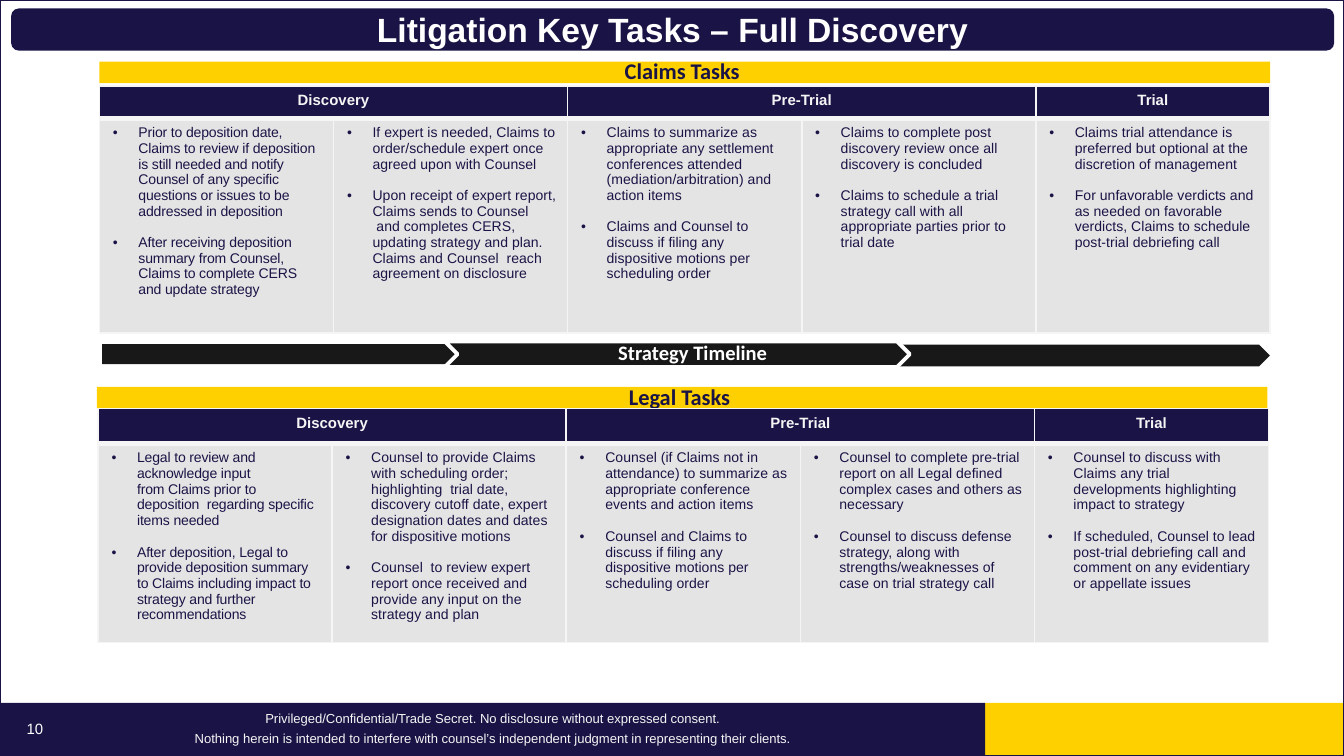
from lxml import etree
from pptx import Presentation
from pptx.dml.color import RGBColor
from pptx.enum.shapes import MSO_SHAPE
from pptx.enum.text import MSO_ANCHOR, PP_ALIGN
from pptx.oxml import parse_xml
from pptx.oxml.ns import nsdecls, qn
from pptx.util import Inches, Pt

RECT = MSO_SHAPE.RECTANGLE
ROUNDED = MSO_SHAPE.ROUNDED_RECTANGLE
PENTAGON = MSO_SHAPE.PENTAGON
CHEVRON = MSO_SHAPE.CHEVRON
MIDDLE = MSO_ANCHOR.MIDDLE
LEFT, CENTER, RIGHT = PP_ALIGN.LEFT, PP_ALIGN.CENTER, PP_ALIGN.RIGHT

NAVY, YELLOW, BLACK = "1A1446", "FFD000", "181818"
WHITE, PALE, GREY = "FFFFFF", "F5F5F5", "E4E4E4"
SLIDE_WIDTH, SLIDE_HEIGHT = 10, 5.625
COLUMN_WIDTH = 1.742
TIE, HARD_SPACE = "~", chr(160)
HEADERS = ["Discovery", "Pre-Trial", "Trial"]

CLAIMS_TASKS = [
    ["Prior to deposition date, Claims to review if deposition is still needed and notify "
     "Counsel of any specific questions or issues to be addressed in deposition",
     "After receiving deposition summary from Counsel, Claims to complete CERS and update strategy"],
    ["If expert is needed, Claims to order/schedule expert once agreed upon with Counsel",
     "Upon receipt of expert report, Claims sends to~Counsel ~and completes CERS, updating "
     "strategy and plan. Claims and Counsel ~reach agreement on disclosure"],
    ["Claims to summarize as appropriate any settlement conferences attended "
     "(mediation/arbitration) and action items",
     "Claims and Counsel to discuss if filing any dispositive motions per scheduling order"],
    ["Claims to complete post discovery review once all discovery is concluded",
     "Claims to schedule a trial strategy call with all appropriate parties prior to trial date"],
    ["Claims trial attendance is preferred but optional at the discretion of management",
     "For unfavorable verdicts and as needed on favorable verdicts, Claims to schedule "
     "post-trial debriefing call"],
]
LEGAL_TASKS = [
    ["Legal to review and acknowledge input from~Claims prior to deposition~ regarding "
     "specific items needed",
     "After~deposition, Legal to provide deposition summary to Claims including impact to "
     "strategy and further recommendations"],
    ["Counsel to provide Claims with scheduling order; highlighting~ trial date, discovery "
     "cutoff date, expert designation dates and dates for dispositive motions",
     "Counsel ~to review expert report once received and provide any input on the strategy and plan"],
    ["Counsel~(if Claims not in attendance) to summarize as appropriate conference events "
     "and action items",
     "Counsel and Claims to discuss if filing any dispositive motions per scheduling order"],
    ["Counsel to complete pre-trial report on all Legal defined complex cases and others as necessary",
     "Counsel to discuss defense strategy, along with strengths/weaknesses of case on trial strategy call"],
    ["Counsel to discuss with Claims any trial developments highlighting impact to strategy",
     "If scheduled, Counsel to lead post-trial debriefing call and comment on any evidentiary "
     "or appellate issues"],
]
FOOTER = [
    "Privileged/Confidential/Trade Secret. No disclosure without expressed consent.",
    "Nothing herein is intended to interfere with counsel’s independent judgment in "
    "representing their clients.",
]


def rgb(value):
    """Turn a hex string into a colour."""
    return RGBColor.from_string(value)


def add_block(page, kind, at, fill=None, line=None, width=1):
    """Add a preset shape with plain fill and line."""
    block = page.shapes.add_shape(kind, *map(Inches, at))
    block.shadow.inherit = False
    if fill:
        block.fill.solid()
        block.fill.fore_color.rgb = rgb(fill)
    else:
        block.fill.background()
    if line:
        block.line.color.rgb = rgb(line)
        block.line.width = Pt(width)
    else:
        block.line.fill.background()
    return block


def write(frame, lines, size, color, font="Arial", bold=False, align=CENTER,
          spacing=1.0, gap=0, bullet=False, tracking=0):
    """Write each line as a paragraph of the text frame."""
    for index, line in enumerate(lines):
        para = frame.add_paragraph() if index else frame.paragraphs[0]
        para.alignment = align
        para.line_spacing = spacing
        if index:
            para.space_before = Pt(gap)
        if bullet:
            properties = para._p.get_or_add_pPr()
            properties.set("marL", str(Inches(0.19)))
            properties.set("indent", str(-Inches(0.19)))
            etree.SubElement(properties, qn("a:buFont")).set("typeface", "Arial")
            etree.SubElement(properties, qn("a:buChar")).set("char", "•")
        span = para.add_run()
        span.text = line.replace(TIE, HARD_SPACE)
        span.font.name = font
        span.font.size = Pt(size)
        span.font.bold = bold
        span.font.color.rgb = rgb(color)
        if tracking:
            span._r.get_or_add_rPr().set("spc", str(tracking))


def label(box, lines, size, color, **style):
    """Write vertically centred text without wrapping in a shape."""
    frame = box.text_frame
    frame.word_wrap = False
    frame.vertical_anchor = MIDDLE
    frame.margin_top = frame.margin_bottom = Inches(0.05)
    write(frame, lines, size, color, **style)


def style_cell(cell, fill, top=1, bottom=1):
    """Give a cell its borders and fill."""
    properties = cell._tc.get_or_add_tcPr()
    for side, width in (("L", 1), ("R", 1), ("T", top), ("B", bottom)):
        properties.append(parse_xml(
            f'<a:ln{side} {nsdecls("a")} w="{Pt(width)}"><a:solidFill>'
            f'<a:srgbClr val="{PALE}"/></a:solidFill></a:ln{side}>'))
    cell.fill.solid()
    cell.fill.fore_color.rgb = rgb(fill)


def add_tasks(page, left, top, heights, tasks):
    """Add a table of bulleted tasks under the three phases."""
    count = len(tasks)
    table = page.shapes.add_table(2, count, Inches(left), Inches(top),
                                  Inches(COLUMN_WIDTH * count), Inches(sum(heights))).table
    for row, height in zip(table.rows, heights):
        row.height = Inches(height)
    for index, items in enumerate(tasks):
        table.columns[index].width = Inches(COLUMN_WIDTH)
        style_cell(table.cell(0, index), NAVY, bottom=3)
        body = table.cell(1, index)
        style_cell(body, GREY, top=3)
        body.margin_right = Inches(0.08)
        write(body.text_frame, items, 7.5, NAVY, align=LEFT, gap=8.5, bullet=True,
              tracking=0 if index else -10)
    for index, header in enumerate(HEADERS):
        cell = table.cell(0, index * 2)
        if index * 2 + 1 < count:
            cell.merge(table.cell(0, index * 2 + 1))
        write(cell.text_frame, [header], 8, PALE, bold=True, spacing=0.95)


def add_band(page, left, top, title):
    """Add a yellow heading band."""
    band = add_block(page, RECT, (left, top, 8.71, 0.16), YELLOW)
    label(band, [title], 12, NAVY, font="Calibri", bold=True, spacing=0.9)


def add_timeline(page):
    """Add the row of black arrows with its title."""
    add_block(page, PENTAGON, (0.76, 2.56, 2.75, 0.15), BLACK, WHITE, 2)
    add_block(page, RECT, (0.76, 2.56, 2.68, 0.15), BLACK)
    add_block(page, CHEVRON, (6.56, 2.55, 2.91, 0.19), BLACK, WHITE, 2)
    add_block(page, CHEVRON, (3.31, 2.54, 3.46, 0.19), BLACK, WHITE, 2)
    title = add_block(page, RECT, (4.06, 2.6, 2.19, 0.07), BLACK)
    label(title, ["Strategy Timeline"], 11, WHITE, font="Calibri", bold=True, spacing=0.9)


def add_footer(page):
    """Add the footer bars, notice and page number."""
    add_block(page, RECT, (7.33, 5.23, 2.67, 0.4), YELLOW)
    notice = add_block(page, RECT, (0, 5.23, 7.33, 0.4), NAVY)
    label(notice, FOOTER, 7, PALE, spacing=0.85, gap=3.5)
    number = page.shapes.add_textbox(*map(Inches, (0.08, 5.32, 0.34, 0.22)))
    label(number, ["10"], 8, WHITE, align=RIGHT, spacing=0.85)


def main():
    """Build the slide and save it."""
    deck = Presentation()
    deck.slide_width, deck.slide_height = Inches(SLIDE_WIDTH), Inches(SLIDE_HEIGHT)
    page = deck.slides.add_slide(deck.slide_layouts[6])
    add_footer(page)
    title = add_block(page, ROUNDED, (0.09, 0.07, 9.83, 0.3), NAVY, NAVY)
    label(title, ["Litigation Key Tasks – Full Discovery"], 18, WHITE, bold=True)
    add_band(page, 0.74, 0.46, "Claims Tasks ")
    add_tasks(page, 0.74, 0.64, (0.24, 1.6), CLAIMS_TASKS)
    add_timeline(page)
    add_band(page, 0.72, 2.88, "Legal Tasks ")
    add_tasks(page, 0.73, 3.04, (0.26, 1.48), LEGAL_TASKS)
    add_block(page, RECT, (0, 0, SLIDE_WIDTH, SLIDE_HEIGHT), line=NAVY, width=0.75)
    deck.save("out.pptx")


if __name__ == "__main__":
    main()
